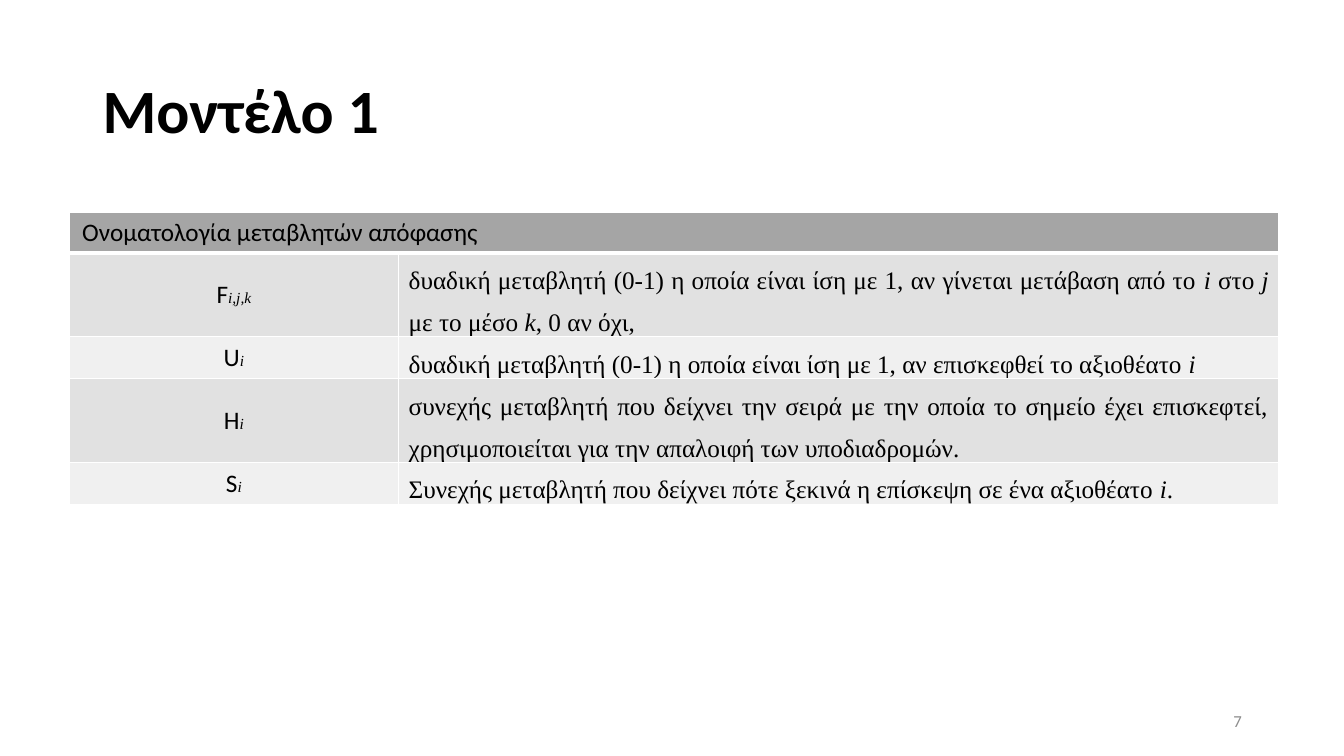
from lxml.etree import SubElement
from pptx import Presentation
from pptx.dml.color import RGBColor
from pptx.enum.text import MSO_ANCHOR as ANCHOR, PP_ALIGN as ALIGN
from pptx.oxml.ns import qn
from pptx.util import Cm, Pt

SANS, SERIF = "Calibri", "Times New Roman"
BLACK, WHITE, GREY = "000000", "FFFFFF", "8C8C8C"
HEADER_FILL = "A5A5A5"
BAND_FILLS = ("E1E1E1", "F0F0F0")
ROW_HEIGHT = 1.04

HEADER = "Ονοματολογία μεταβλητών απόφασης"
VARIABLES = [
    ("F", "i,j,k", "δυαδική μεταβλητή (0-1) η οποία είναι ίση με 1, αν γίνεται "
     "μετάβαση από το *i *στο *j* με το μέσο *k*, 0 αν όχι,"),
    ("U", "i", "δυαδική μεταβλητή (0-1) η οποία είναι ίση με 1, αν επισκεφθεί "
     "το αξιοθέατο *i*"),
    ("H", "i", "συνεχής μεταβλητή που δείχνει την σειρά με την οποία το σημείο "
     "έχει επισκεφτεί, χρησιμοποιείται για την απαλοιφή των υποδιαδρομών."),
    ("S", "i", "Συνεχής μεταβλητή που δείχνει πότε ξεκινά η επίσκεψη σε ένα "
     "αξιοθέατο *i*."),
]


def rgb(value):
    return RGBColor.from_string(value)


def set_font(font, size, name=SANS, color=BLACK, bold=False):
    font.size = Pt(size)
    font.name = name
    font.bold = bold
    font.color.rgb = rgb(color)


def add_title(slide, text):
    title = slide.shapes.title
    title.left, title.top = Cm(2.33), Cm(1.01)
    title.width, title.height = Cm(29.21), Cm(3.68)
    tf = title.text_frame
    tf.text = text
    tf.vertical_anchor = ANCHOR.MIDDLE
    p = tf.paragraphs[0]
    p.alignment = ALIGN.LEFT
    p.line_spacing = 0.9
    set_font(p.font, 44, bold=True)


def add_page_number(slide, text):
    sp = slide.shapes.add_textbox(Cm(23.93), Cm(17.65), Cm(7.62), Cm(1.02))
    tf = sp.text_frame
    tf.word_wrap = True
    tf.vertical_anchor = ANCHOR.MIDDLE
    p = tf.paragraphs[0]
    p.text = text
    p.alignment = ALIGN.RIGHT
    set_font(p.font, 12, color=GREY)


def style_cell(cell, fill, margins, anchor, bottom=1):
    tc_pr = cell._tc.get_or_add_tcPr()
    for side, width in (("L", 1), ("R", 1), ("T", 1), ("B", bottom)):
        line = SubElement(tc_pr, qn(f"a:ln{side}"), w=str(Pt(width)))
        SubElement(SubElement(line, qn("a:solidFill")), qn("a:srgbClr"), val=WHITE)
    cell.fill.solid()
    cell.fill.fore_color.rgb = rgb(fill)
    cell.margin_left = cell.margin_right = Cm(margins[0])
    cell.margin_top = cell.margin_bottom = Cm(margins[1])
    cell.vertical_anchor = anchor


def fill_header(table):
    first, last = table.cell(0, 0), table.cell(0, 1)
    first.merge(last)
    for cell in (first, last):
        style_cell(cell, HEADER_FILL, (0.33, 0.13), ANCHOR.MIDDLE, bottom=3)
    p = first.text_frame.paragraphs[0]
    p.text = HEADER
    set_font(p.font, 18)


def fill_symbol(cell, letter, index, fill):
    style_cell(cell, fill, (0.33, 0.13), ANCHOR.MIDDLE)
    p = cell.text_frame.paragraphs[0]
    p.alignment = ALIGN.CENTER
    for text, size, name in ((letter, 18, SANS), (index, 11, SERIF)):
        r = p.add_run()
        r.text = text
        set_font(r.font, size, name)
        r.font.italic = name == SERIF


def fill_meaning(cell, marked_text, fill):
    style_cell(cell, fill, (0.25, 0), ANCHOR.TOP)
    p = cell.text_frame.paragraphs[0]
    p.alignment = ALIGN.JUSTIFY
    p.line_spacing = 1.5
    for i, text in enumerate(marked_text.split("*")):
        if text:
            r = p.add_run()
            r.text = text
            set_font(r.font, 18, SERIF)
            r.font.italic = i % 2 == 1


def add_variable_table(slide):
    rows = len(VARIABLES) + 1
    table = slide.shapes.add_table(rows, 2, Cm(1.74), Cm(5.34), Cm(30.48),
                                   Cm(ROW_HEIGHT * rows)).table
    table.first_row = table.horz_banding = False
    table.columns[0].width, table.columns[1].width = Cm(8.31), Cm(22.17)
    fill_header(table)
    for row, (letter, index, meaning) in enumerate(VARIABLES, 1):
        fill = BAND_FILLS[(row - 1) % 2]
        fill_symbol(table.cell(row, 0), letter, index, fill)
        fill_meaning(table.cell(row, 1), meaning, fill)


def main():
    prs = Presentation()
    prs.slide_width, prs.slide_height = Cm(33.87), Cm(19.05)
    slide = prs.slides.add_slide(prs.slide_layouts[5])
    add_title(slide, "Μοντέλο 1")
    add_variable_table(slide)
    add_page_number(slide, "7")
    prs.save("out.pptx")


if __name__ == "__main__":
    main()
